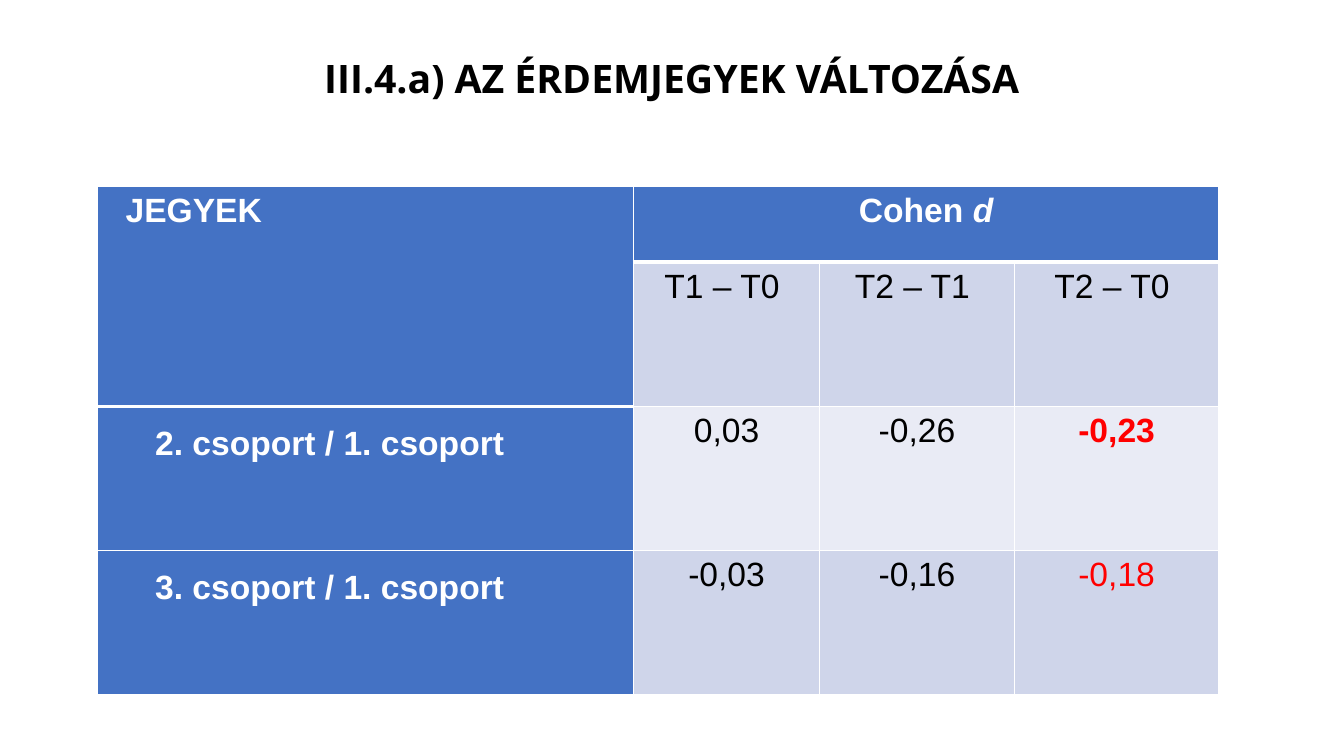
from lxml import etree
from pptx import Presentation
from pptx.dml.color import RGBColor
from pptx.enum.text import MSO_ANCHOR, PP_ALIGN
from pptx.oxml.ns import qn
from pptx.util import Cm, Pt

CENTER, LEFT = PP_ALIGN.CENTER, PP_ALIGN.LEFT
MIDDLE = MSO_ANCHOR.MIDDLE

BLACK, WHITE, RED = "000000", "FFFFFF", "FF0000"
BLUE, LIGHT, PALE = "4472C4", "CFD5EA", "E9EBF5"

COLUMN_WIDTHS = [13.51, 4.7, 4.9, 5.16]
ROW_HEIGHTS = [1.91, 3.63, 3.63, 3.63]
PERIODS = ["T1 – T0 ", "T2 – T1 ", "T2 – T0 "]
GROUPS = [
    ("2. csoport / 1. csoport", ["0,03", "-0,26", "-0,23"], PALE),
    ("3. csoport / 1. csoport", ["-0,03", "-0,16", "-0,18"], LIGHT),
]


def rgb(color):
    return RGBColor.from_string(color)


def style_span(span, size, font, color, bold=False):
    span.font.size = Pt(size)
    span.font.name = font
    span.font.bold = bold
    span.font.color.rgb = rgb(color)


def add_title(page, text):
    box = page.shapes.add_textbox(Cm(2.79), Cm(0.48), Cm(28.27), Cm(3.1))
    frame = box.text_frame
    frame.word_wrap = True
    frame.vertical_anchor = MIDDLE
    frame.text = text
    para = frame.paragraphs[0]
    para.alignment = CENTER
    para.line_spacing = 0.9
    style_span(para.runs[0], 28, "Open Sans", BLACK, True)


def set_borders(cell, top, bottom):
    """White rules on all four sides; widths in points."""
    properties = cell._tc.get_or_add_tcPr()
    for side, width in (("L", 1), ("R", 1), ("T", top), ("B", bottom)):
        line = etree.SubElement(properties, qn(f"a:ln{side}"), w=str(Pt(width)))
        fill = etree.SubElement(line, qn("a:solidFill"))
        etree.SubElement(fill, qn("a:srgbClr"), val=WHITE)


def fill_cell(cell, fill):
    cell.fill.solid()
    cell.fill.fore_color.rgb = rgb(fill)


def write_cell(cell, text, color=BLACK, bold=False, align=CENTER):
    cell.margin_left = cell.margin_right = Cm(0.48)
    cell.margin_top = cell.margin_bottom = 0
    para = cell.text_frame.paragraphs[0]
    para.text = text
    para.alignment = align
    para.line_spacing = 1.15
    para.space_after = Pt(10)
    style_span(para.runs[0], 24, "Arial", color, bold)
    return para


def write_group_name(cell, text):
    para = write_cell(cell, text, WHITE, True, LEFT)
    cell.margin_left = cell.margin_right = Cm(0.19)
    para.line_spacing = 1.5
    para.space_after = Pt(0)
    para._p.get_or_add_pPr().set("marL", str(Cm(1.27)))


def add_grades_table(page):
    table = page.shapes.add_table(
        len(ROW_HEIGHTS), len(COLUMN_WIDTHS), Cm(2.45), Cm(4.7),
        Cm(sum(COLUMN_WIDTHS)), Cm(sum(ROW_HEIGHTS))).table
    for column, width in zip(table.columns, COLUMN_WIDTHS):
        column.width = Cm(width)
    for row, height in zip(table.rows, ROW_HEIGHTS):
        row.height = Cm(height)

    # Borders and fills: a thick rule closes each header block
    row_fills = [BLUE, LIGHT] + [fill for _, _, fill in GROUPS]
    for r, row_fill in enumerate(row_fills):
        for c in range(len(COLUMN_WIDTHS)):
            cell = table.cell(r, c)
            header_end = 1 if c == 0 else 0
            set_borders(cell, 3 if r == header_end + 1 else 1,
                        3 if r == header_end else 1)
            fill_cell(cell, BLUE if c == 0 else row_fill)

    # Headers
    table.cell(0, 0).merge(table.cell(1, 0))
    table.cell(0, 1).merge(table.cell(0, 3))
    write_cell(table.cell(0, 0), " JEGYEK", WHITE, True, LEFT)
    para = write_cell(table.cell(0, 1), "Cohen ", WHITE, True)
    symbol = para.add_run()
    symbol.text = "d"
    style_span(symbol, 24, "Arial", WHITE, True)
    symbol.font.italic = True
    for c, period in enumerate(PERIODS, 1):
        write_cell(table.cell(1, c), period)

    # Effect sizes: the overall change is red, the strongest one bold
    for r, (name, values, _) in enumerate(GROUPS, 2):
        write_group_name(table.cell(r, 0), name)
        for c, value in enumerate(values, 1):
            overall = c == len(values)
            write_cell(table.cell(r, c), value, RED if overall else BLACK,
                       overall and r == 2)


def main():
    deck = Presentation()
    deck.slide_width, deck.slide_height = Cm(33.87), Cm(19.05)
    page = deck.slides.add_slide(deck.slide_layouts[6])
    add_title(page, "III.4.a) AZ ÉRDEMJEGYEK VÁLTOZÁSA")
    add_grades_table(page)
    deck.save("out.pptx")


if __name__ == "__main__":
    main()
